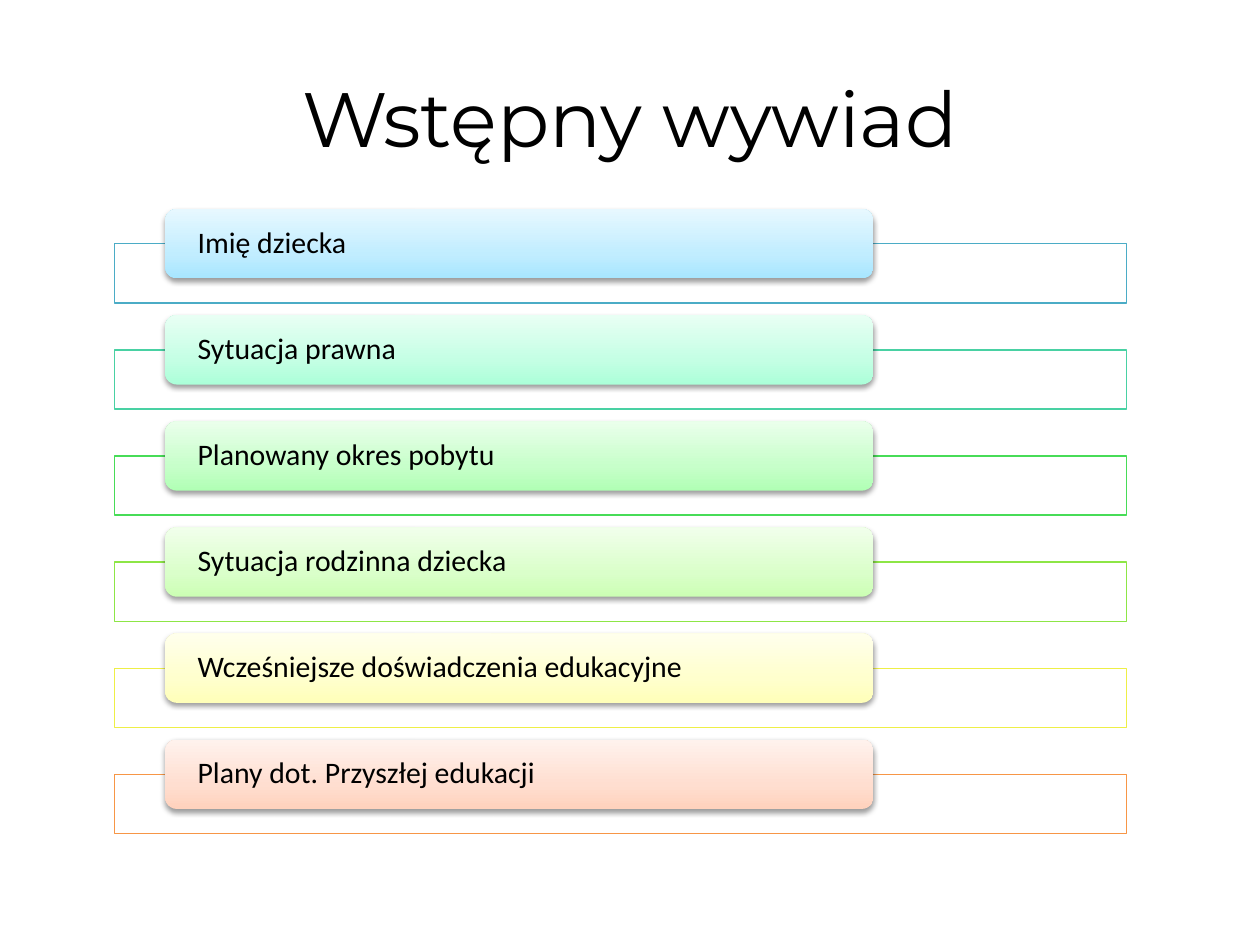
from pptx import Presentation
from pptx import util as u
from pptx.dml.color import RGBColor
from pptx.enum import shapes, text
from pptx.oxml import parse_xml
from pptx.oxml.ns import nsdecls, qn

# Content: topic, frame colour, gradient colours from bottom to top
TITLE = "Wstępny wywiad"
TOPICS = [
    ("Imię dziecka", "4BACC6", ("A7E6FF", "C1EDFF", "E7F8FF")),
    ("Sytuacja prawna", "49D1A3", ("ACFFD9", "C4FFE4", "E8FFF4")),
    ("Planowany okres pobytu", "47DC57", ("B0FFB4", "C7FFCA", "EAFFEB")),
    ("Sytuacja rodzinna dziecka", "8DE646", ("CCFFB4", "DAFFCA", "F1FFEB")),
    ("Wcześniejsze doświadczenia edukacyjne", "EEEF46", ("FFFFB9", "FFFFCD", "FFFFEC")),
    ("Plany dot. Przyszłej edukacji", "F79646", ("FFD2BD", "FFDED0", "FFF2ED")),
]

THEME = {
    "ink": "000000", "paper": "FFFFFF",
    "title_font": "Montserrat", "title_size": 44,
    "label_font": "Calibri", "label_size": 17,
    "stops": (0, 35, 100),
}

# Grid in inches: each row holds a frame and a label overlapping its top edge
FIRST_ROW, LAST_ROW = 1.66, 5.87
ROW_STEP = (LAST_ROW - FIRST_ROW) / (len(TOPICS) - 1)
FRAME_LEFT, FRAME_WIDTH, FRAME_HEIGHT = 0.91, 8.03, 0.47
LABEL_WIDTH, LABEL_HEIGHT = FRAME_WIDTH * 0.7, 0.55
LABEL_LEFT = FRAME_LEFT + FRAME_WIDTH * 0.05
LABEL_INSET = 0.23


def style_font(font, role):
    font.name = THEME[role + "_font"]
    font.size = u.Pt(THEME[role + "_size"])
    font.color.rgb = RGBColor.from_string(THEME["ink"])


def add_box(slide, kind, left, top, width, height):
    box = slide.shapes.add_shape(kind, *map(u.Inches, (left, top, width, height)))
    box.shadow.inherit = False
    return box


def add_frame(slide, top, colour):
    frame = add_box(slide, shapes.MSO_SHAPE.RECTANGLE,
                    FRAME_LEFT, top, FRAME_WIDTH, FRAME_HEIGHT)
    frame.fill.solid()
    frame.fill.fore_color.rgb = RGBColor.from_string(THEME["paper"])
    fill_colour = frame._element.spPr.find(qn("a:solidFill"))[0]
    fill_colour.append(parse_xml(f'<a:alpha {nsdecls("a")} val="90000"/>'))
    frame.line.color.rgb = RGBColor.from_string(colour)
    frame.line.width = u.Pt(0.75)


def add_label(slide, top, topic, colours):
    label = add_box(slide, shapes.MSO_SHAPE.ROUNDED_RECTANGLE,
                    LABEL_LEFT, top, LABEL_WIDTH, LABEL_HEIGHT)
    label.line.fill.background()

    # Upward gradient with three stops
    label.fill.gradient()
    label.fill.gradient_angle = 90
    gradient = label._element.spPr.find(qn("a:gradFill"))
    stops = "".join(f'<a:gs pos="{stop * 1000}"><a:srgbClr val="{colour}"/></a:gs>'
                    for stop, colour in zip(THEME["stops"], colours))
    gradient.replace(gradient.find(qn("a:gsLst")),
                     parse_xml(f'<a:gsLst {nsdecls("a")}>{stops}</a:gsLst>'))

    # Soft shadow below
    label._element.spPr.find(qn("a:effectLst")).append(parse_xml(
        f'<a:outerShdw {nsdecls("a")} blurRad="{u.Pt(3.1)}" dist="{u.Pt(1.6)}" '
        f'dir="5400000" rotWithShape="0"><a:srgbClr val="{THEME["ink"]}">'
        '<a:alpha val="38000"/></a:srgbClr></a:outerShdw>'))

    # Topic text
    frame = label.text_frame
    frame.text = topic
    frame.word_wrap = True
    frame.vertical_anchor = text.MSO_ANCHOR.MIDDLE
    frame.margin_left = frame.margin_right = u.Inches(LABEL_INSET)
    frame.margin_top = frame.margin_bottom = 0
    paragraph = frame.paragraphs[0]
    paragraph.alignment = text.PP_ALIGN.LEFT
    paragraph.line_spacing = 0.9
    style_font(paragraph.runs[0].font, "label")


def main():
    prs = Presentation()
    prs.slide_width, prs.slide_height = u.Inches(10), u.Inches(7.5)
    slide = prs.slides.add_slide(prs.slide_layouts[5])

    # Title
    title = slide.shapes.title
    title.left, title.top, title.width, title.height = map(u.Inches, (0.5, 0.3, 9, 1.25))
    title.text_frame.text = TITLE
    title.text_frame.vertical_anchor = text.MSO_ANCHOR.MIDDLE
    heading = title.text_frame.paragraphs[0]
    heading.alignment = text.PP_ALIGN.CENTER
    style_font(heading.runs[0].font, "title")

    # Topic rows
    for row, (topic, frame_colour, colours) in enumerate(TOPICS):
        top = FIRST_ROW + row * ROW_STEP
        add_frame(slide, top + LABEL_HEIGHT / 2, frame_colour)
        add_label(slide, top, topic, colours)

    prs.save("out.pptx")


if __name__ == "__main__":
    main()
